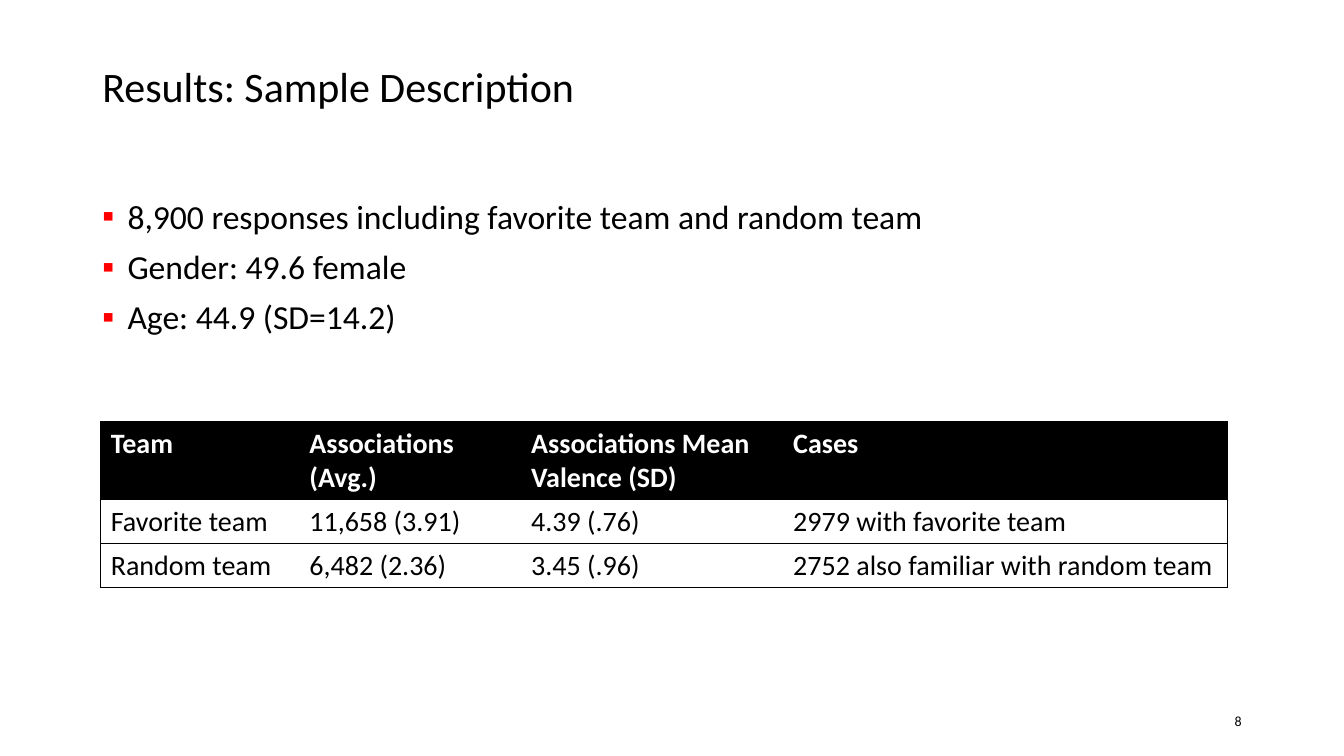
from lxml import etree
from pptx import Presentation
from pptx.dml.color import RGBColor
from pptx.enum.text import MSO_ANCHOR as Anchor, PP_ALIGN as Align
from pptx.oxml.ns import qn
from pptx.util import Inches, Pt

COLORS = {"text": "000000", "paper": "FFFFFF", "bullet": "FF0000", "line": "000000"}
FONT = "Calibri"

deck = Presentation()
deck.slide_width, deck.slide_height = Inches(13.33), Inches(7.5)
page = deck.slides.add_slide(deck.slide_layouts[6])
COL, ROW = deck.slide_width / 160, deck.slide_height / 90


def write(para, text, size, color="text", bold=False, align=Align.LEFT, spacing=1.0, before=0):
    para.alignment, para.line_spacing, para.space_before = align, spacing, Pt(before)
    span = para.add_run()
    span.text = text
    span.font.name, span.font.size, span.font.bold = FONT, Pt(size), bold
    span.font.color.rgb = RGBColor.from_string(COLORS[color])


def add_box(left, top, width, height, anchor=Anchor.TOP):
    box = page.shapes.add_textbox(int(left * COL), int(top * ROW), int(width * COL), int(height * ROW))
    box.text_frame.word_wrap = True
    box.text_frame.vertical_anchor = anchor
    return box.text_frame


title = add_box(11, 7.45, 138, 6.4, Anchor.BOTTOM)
write(title.paragraphs[0], "Results: Sample Description", 30, spacing=0.9)

number = add_box(113, 83.4, 36, 4.8, Anchor.MIDDLE)
write(number.paragraphs[0], "8", 10, align=Align.RIGHT)

facts = [
    "8,900 responses including favorite team and random team",
    "Gender: 49.6 female",
    "Age: 44.9 (SD=14.2)",
]
summary = add_box(11, 23.25, 131.2, 21.4)
for index, fact in enumerate(facts):
    para = summary.paragraphs[0] if index == 0 else summary.add_paragraph()
    write(para, fact, 24, spacing=0.9, before=10)
    props = para._p.get_or_add_pPr()
    props.set("marL", str(int(3 * COL)))
    props.set("indent", str(int(-3 * COL)))
    bullet_color = etree.SubElement(props, qn("a:buClr"))
    etree.SubElement(bullet_color, qn("a:srgbClr"), val=COLORS["bullet"])
    etree.SubElement(props, qn("a:buFont"), typeface=FONT)
    etree.SubElement(props, qn("a:buChar"), char="▪")

records = [
    ["Team", "Associations (Avg.)", "Associations Mean Valence (SD)", "Cases"],
    ["Favorite team", "11,658 (3.91)", "4.39 (.76)", "2979 with favorite team"],
    ["Random team", "6,482 (2.36)", "3.45 (.96)", "2752 also familiar with random team"],
]
widths = [23.64, 26.4, 31.2, 52.92]
heights = [9.3, 5.25, 5.25]
table = page.shapes.add_table(
    len(heights), len(widths), int(12 * COL), int(50.15 * ROW),
    int(sum(widths) * COL), int(sum(heights) * ROW),
).table
table.horz_banding = False
for column, width in zip(table.columns, widths):
    column.width = int(width * COL)
for row, height in zip(table.rows, heights):
    row.height = int(height * ROW)

for r, record in enumerate(records):
    header = r == 0
    for c, text in enumerate(record):
        cell = table.cell(r, c)
        write(cell.text_frame.paragraphs[0], text, 20, "paper" if header else "text", bold=header)
        cell.fill.solid()
        cell.fill.fore_color.rgb = RGBColor.from_string(COLORS["text" if header else "paper"])
        sides = {"lnL": c == 0, "lnR": c == len(widths) - 1, "lnT": True, "lnB": True}
        for position, (side, visible) in enumerate(sides.items()):
            line = etree.Element(qn(f"a:{side}"), w=str(Pt(0.5)))
            cell._tc.get_or_add_tcPr().insert(position, line)
            paint = etree.SubElement(line, qn("a:solidFill" if visible else "a:noFill"))
            if visible:
                etree.SubElement(paint, qn("a:srgbClr"), val=COLORS["line"])

deck.save("out.pptx")
